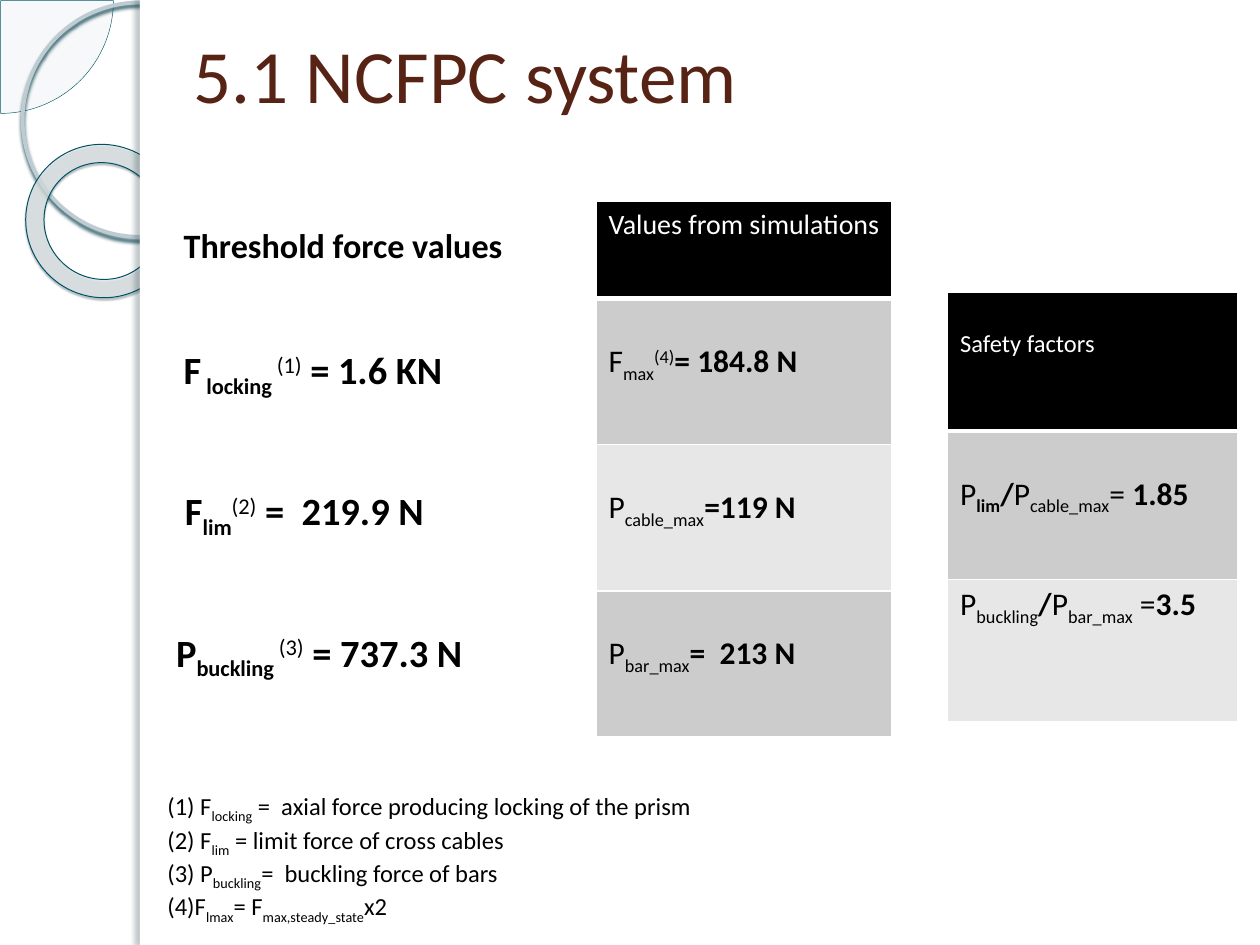
from lxml import etree
from pptx import Presentation
from pptx.dml.color import RGBColor
from pptx.enum.shapes import MSO_SHAPE as SHAPE
from pptx.enum.text import MSO_ANCHOR as ANCHOR
from pptx.oxml.ns import qn
from pptx.util import Inches, Pt

SUB, SUP = -25, 30


def rgb(hex_color):
    return RGBColor.from_string(hex_color)


def child(parent, tag, **attrs):
    return etree.SubElement(parent, qn(tag), {k: str(v) for k, v in attrs.items()})


def set_alpha(fill_parent, percent):
    """Make the solid fill under fill_parent partly transparent."""
    color = fill_parent.find(qn("a:solidFill"))[0]
    child(color, "a:alpha", val=percent * 1000)


def sub(text, bold=False):
    return text, bold, SUB


def sup(text):
    return text, False, SUP


def bold(text):
    return text, True, 0


class SlideBuilder:
    font = "Calibri"
    black, white = "000000", "FFFFFF"
    bands = ["CCCCCC", "E7E7E7"]

    def __init__(self, slide):
        self.s = slide

    def add_runs(self, p, runs, size, color=black):
        """Fill a paragraph with plain strings or (text, bold, baseline) runs."""
        for item in runs:
            text, is_bold, baseline = (item, False, 0) if isinstance(item, str) else item
            r = p.add_run()
            r.text = text
            fmt = {"name": self.font, "size": Pt(size), "bold": is_bold}
            for key, value in fmt.items():
                setattr(r.font, key, value)
            r.font.color.rgb = rgb(color)
            if baseline:
                r._r.get_or_add_rPr().set("baseline", str(baseline * 1000))

    def text(self, box, lines, size, color=black, anchor=ANCHOR.TOP):
        tf = self.s.shapes.add_textbox(*map(Inches, box)).text_frame
        tf.word_wrap = True
        tf.vertical_anchor = anchor
        for i, runs in enumerate(lines):
            p = tf.add_paragraph() if i else tf.paragraphs[0]
            self.add_runs(p, runs, size, color)

    def shape(self, kind, box, fill=None, alpha=None, line=None, shadow=None,
              adjust=(), rotation=0):
        """line is (colour, points); shadow is (colour, alpha, blur, distance, angle)."""
        sp = self.s.shapes.add_shape(kind, *map(Inches, box))
        sp.rotation = rotation
        for i, value in enumerate(adjust):
            sp.adjustments[i] = value
        if fill:
            sp.fill.solid()
            sp.fill.fore_color.rgb = rgb(fill)
            if alpha:
                set_alpha(sp._element.spPr, alpha)
        else:
            sp.fill.background()
        if line:
            sp.line.color.rgb = rgb(line[0])
            sp.line.width = Pt(line[1])
        else:
            sp.line.fill.background()
        sp.shadow.inherit = False
        if shadow:
            color, opacity, blur, dist, angle = shadow
            effects = sp._element.spPr.find(qn("a:effectLst"))
            outer = child(effects, "a:outerShdw", blurRad=Pt(blur), dist=Pt(dist),
                          dir=angle * 60000, algn="tl", rotWithShape=0)
            clr = child(outer, "a:srgbClr", val=color)
            child(clr, "a:alpha", val=opacity * 1000)

    def borders(self, cell, bottom):
        tc_pr = cell._tc.get_or_add_tcPr()
        widths = {"a:lnL": 1, "a:lnR": 1, "a:lnT": 1, "a:lnB": bottom}
        for i, (tag, width) in enumerate(widths.items()):
            ln = child(tc_pr, tag, w=Pt(width))
            child(child(ln, "a:solidFill"), "a:srgbClr", val=self.white)
            tc_pr.insert(i, ln)

    def table(self, left, top, width, rows):
        """One column; each row is (height, top margin, size, runs), the first a header."""
        height = sum(row[0] for row in rows)
        table = self.s.shapes.add_table(
            len(rows), 1, *map(Inches, (left, top, width, height))).table
        for i, (row_height, margin, size, runs) in enumerate(rows):
            table.rows[i].height = Inches(row_height)
            cell = table.cell(i, 0)
            cell.margin_top = Inches(margin)
            cell.fill.solid()
            cell.fill.fore_color.rgb = rgb(self.bands[(i - 1) % 2] if i else self.black)
            self.borders(cell, 1 if i else 3)
            self.add_runs(cell.text_frame.paragraphs[0], runs, size,
                          self.black if i else self.white)


def main():
    prs = Presentation()
    prs.slide_width, prs.slide_height = Inches(10), Inches(7.5)
    b = SlideBuilder(prs.slides.add_slide(prs.slide_layouts[6]))

    # Side decoration
    b.shape(SHAPE.PIE, (-0.89, -0.89, 1.79, 1.79), "E9ECED", 33,
            line=("005569", 0.25), adjust=(0, 54))
    b.shape(SHAPE.OVAL, (0.18, 0.02, 1.86, 1.86), line=("BECCD2", 2.15),
            shadow=("0B4350", 85, 2, 2, 90))
    b.shape(SHAPE.DONUT, (0.2, 1.15, 1.23, 1.21), "E1E5E6", 75, line=("005063", 0.58),
            shadow=("00252D", 35, 1, 1.2, 75), adjust=(0.12,), rotation=38.6)
    b.shape(SHAPE.RECTANGLE, (1.11, 0, 8.89, 7.5), b.white)
    b.shape(SHAPE.RECTANGLE, (1.11, 0, 0.08, 7.5), b.white,
            shadow=("0D2930", 25, 3, 3, 180))

    b.text((1.44, 0.07, 8.14, 1.02), [["5.1 NCFPC system"]], 43, "572314", ANCHOR.MIDDLE)
    b.text((1.36, 1.36, 3.08, 1.17), [[bold("Threshold force values")]], 19.5,
           anchor=ANCHOR.MIDDLE)

    thresholds = [
        (1.36, [bold("F"), sub(" locking ", True), sup("(1)"), bold(" = 1.6 KN")]),
        (1.37, [bold("F"), sub("lim", True), sup("(2)"), bold(" =  219.9 N")]),
        (1.3, [bold("P"), sub("buckling", True), sup(" (3)"), bold(" = 737.3 N")]),
    ]
    for i, (left, runs) in enumerate(thresholds):
        b.text((left, 2.7 + 1.12 * i, 3.27, 0.47), [runs], 22)

    simulated = [
        ["F", sub("max"), sup("(4)"), bold("= 184.8 N")],
        ["P", sub("cable_max"), bold("=119 N")],
        ["P", sub("bar_max"), bold("=  213 N")],
    ]
    b.table(4.73, 1.6, 2.35, [(0.77, 0.05, 16, ["Values from simulations"])]
            + [(1.16, 0.35, 18, runs) for runs in simulated])
    b.table(7.52, 2.32, 2.3, [
        (1.1, 0.29, 14, ["Safety factors"]),
        (1.18, 0.35, 18, ["P", sub("lim", True), bold("/"), "P", sub("cable_max"),
                          "= ", bold("1.85")]),
        (1.13, 0.05, 18, ["P", sub("buckling"), bold("/"), "P", sub("bar_max"),
                          " =", bold("3.5")]),
    ])

    b.text((1.23, 6.23, 4.52, 1.04), [
        ["(1) F", sub("locking"), " =  axial force producing locking of the prism"],
        ["(2) F", sub("lim"), " = limit force of cross cables"],
        ["(3) P", sub("buckling"), "=  buckling force of bars"],
        ["(4)F", sub("lmax"), "= F", sub("max,steady_state"), "x2"],
    ], 14)

    prs.save("out.pptx")


if __name__ == "__main__":
    main()
